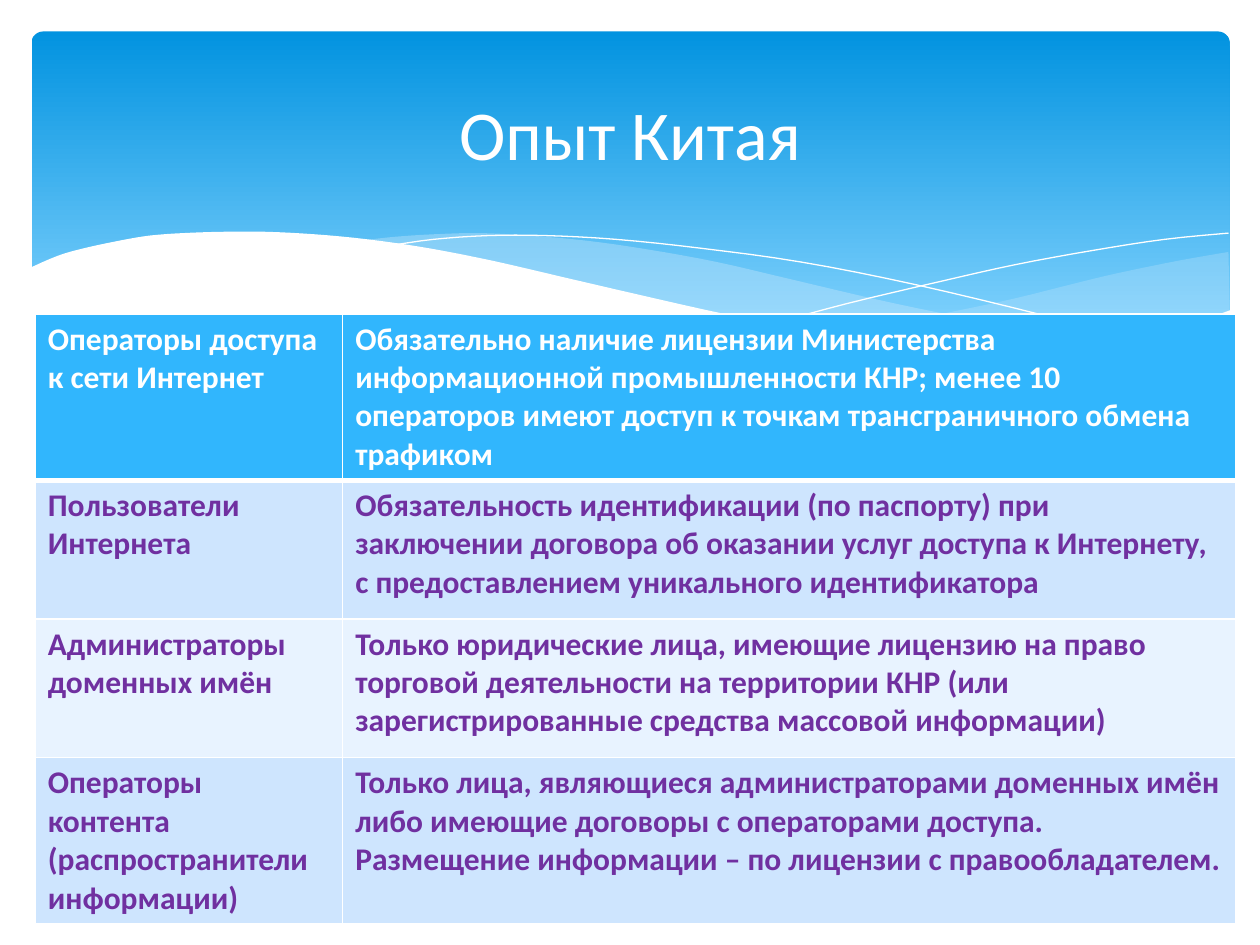
from dataclasses import dataclass
from typing import Optional

from lxml.etree import SubElement
from pptx import Presentation
from pptx.dml.color import RGBColor
from pptx.enum.shapes import MSO_SHAPE as Preset
from pptx.enum.text import MSO_ANCHOR as Anchor, PP_ALIGN as Align
from pptx.oxml.ns import qn
from pptx.util import Emu, Inches, Pt

# The page is a grid of 1000 columns by 750 rows.
UNIT = Inches(0.01)
FONT = "Calibri"
COLORS = {
    "white": "FFFFFF", "sky_top": "0293E0", "sky_bottom": "83D3FE",
    "mist": "C6E7FC", "header": "31B6FD", "band_dark": "CEE5FE",
    "band_light": "E8F3FF", "purple": "7030A0",
}
Point = tuple[float, float]


@dataclass(frozen=True)
class Wave:
    """Edges are smoothed one by one; a wave without fill is an open line."""
    edges: list[list[Point]]
    fill: Optional[str] = None
    opacity: int = 100


@dataclass(frozen=True)
class Row:
    topic: str
    rule: str
    fill: str
    ink: str = "purple"
    rule_below: int = 1


WAVES = [
    Wave([[(975, 200), (935, 207), (891, 216), (861, 223), (805, 237), (753, 248),
           (706, 257), (661, 265)],
          [(661, 265), (705, 271), (757, 276), (803, 278), (844, 277), (881, 273),
           (913, 267), (942, 259), (976, 247)]], "mist", 29),
    Wave([[(893, 273), (837, 265), (775, 254), (706, 240), (629, 222), (569, 208),
           (514, 198), (465, 191), (420, 187), (380, 185), (344, 186), (313, 188),
           (286, 191)],
          [(286, 191), (342, 199), (404, 211), (449, 222), (530, 240), (601, 255),
           (665, 266), (722, 274), (773, 277), (818, 278), (857, 277), (893, 273)]],
         "mist", 40),
    Wave([[(309, 195), (344, 190), (387, 187), (433, 187), (489, 190), (556, 197),
           (636, 208), (727, 226), (831, 251), (907, 272)]]),
    Wave([[(613, 257), (672, 241), (748, 223), (806, 210), (866, 199), (924, 190),
           (975, 185)]]),
    Wave([[(977, 246), (940, 259), (899, 269), (850, 275), (809, 277), (761, 275),
           (708, 270), (648, 262), (579, 250), (503, 233), (447, 220), (391, 207),
           (340, 197), (292, 190), (250, 186), (211, 184), (177, 184), (146, 185),
           (119, 187), (95, 191), (67, 197), (46, 203), (23, 213)],
          [(23, 329), (977, 329)]], "white"),
]

ROWS = [
    Row("Операторы доступа к сети Интернет",
        "Обязательно наличие лицензии Министерства информационной промышленности КНР; "
        "менее 10 операторов имеют доступ к точкам трансграничного обмена трафиком",
        "header", "white", 3),
    Row("Пользователи Интернета",
        "Обязательность идентификации (по паспорту) при заключении договора об оказании "
        "услуг доступа к Интернету, с предоставлением уникального идентификатора",
        "band_dark"),
    Row("Администраторы доменных имён",
        "Только юридические лица, имеющие лицензию на право торговой деятельности на "
        "территории КНР (или зарегистрированные средства массовой информации)",
        "band_light"),
    Row("Операторы контента (распространители информации)",
        "Только лица, являющиеся администраторами доменных имён либо имеющие договоры с "
        "операторами доступа. Размещение информации – по лицензии с правообладателем.",
        "band_dark"),
]


def color(name: str) -> RGBColor:
    return RGBColor.from_string(COLORS[name])


def grid(*lengths: float) -> list[Emu]:
    return [Emu(round(length * UNIT)) for length in lengths]


def smooth(points: list[Point], steps: int = 4) -> list[Point]:
    """Catmull-Rom curve through the points; two points stay a straight line."""
    if len(points) < 3:
        return points
    padded = [points[0], *points, points[-1]]
    curve = [points[0]]
    for a, b, c, d in zip(padded, padded[1:], padded[2:], padded[3:]):
        for step in range(1, steps + 1):
            t = step / steps
            curve.append(tuple(
                (2 * q + (r - p) * t + (2 * p - 5 * q + 4 * r - s) * t ** 2
                 + (3 * q - p - 3 * r + s) * t ** 3) / 2
                for p, q, r, s in zip(a, b, c, d)))
    return curve


def draw_sky(page) -> None:
    sky = page.shapes.add_shape(Preset.ROUNDED_RECTANGLE, *grid(25, 25, 951, 270))
    sky.adjustments[0] = 0.034
    sky.shadow.inherit = False
    sky.line.fill.background()
    sky.fill.gradient()
    sky.fill.gradient_angle = 270
    stops = zip(sky.fill.gradient_stops, (0, 0.9), ("sky_top", "sky_bottom"))
    for stop, position, name in stops:
        stop.position = position
        stop.color.rgb = color(name)


def draw_wave(page, wave: Wave) -> None:
    points = [grid(*point) for edge in wave.edges for point in smooth(edge)]
    builder = page.shapes.build_freeform(*points[0])
    builder.add_line_segments(points[1:], close=wave.fill is not None)
    shape = builder.convert_to_shape()
    shape.shadow.inherit = False
    if wave.fill is None:
        shape.fill.background()
        shape.line.color.rgb = color("white")
        shape.line.width = Pt(0)
        return
    shape.line.fill.background()
    shape.fill.solid()
    shape.fill.fore_color.rgb = color(wave.fill)
    if wave.opacity < 100:
        tint = shape.fill._xPr.find(qn("a:solidFill"))[0]
        SubElement(tint, qn("a:alpha"), val=str(wave.opacity * 1000))


def style_text(frame, size: int, ink: str, bold: bool = False) -> None:
    for para in frame.paragraphs:
        for span in para.runs:
            span.font.name = FONT
            span.font.size = Pt(size)
            span.font.bold = bold
            span.font.color.rgb = color(ink)


def draw_title(page, text: str) -> None:
    box = page.shapes.add_textbox(*grid(50, 37, 900, 137))
    frame = box.text_frame
    frame.word_wrap = True
    frame.vertical_anchor = Anchor.MIDDLE
    frame.text = text
    frame.paragraphs[0].alignment = Align.CENTER
    style_text(frame, 40, "white")


def set_borders(cell, above: int, below: int) -> None:
    """Border widths in points; the schema wants borders before the fill."""
    properties = cell._tc.get_or_add_tcPr()
    for side, width in (("L", 1), ("R", 1), ("T", above), ("B", below)):
        line = SubElement(properties, qn(f"a:ln{side}"), w=str(Pt(width)))
        solid = SubElement(line, qn("a:solidFill"))
        SubElement(solid, qn("a:srgbClr"), val=COLORS["white"])


def draw_table(page, rows: list[Row]) -> None:
    frame = page.shapes.add_table(len(rows), 2, *grid(28, 249, 953, 110 * len(rows)))
    table = frame.table
    table.horz_banding = False
    for column, width in zip(table.columns, grid(244, 709)):
        column.width = width
    above = 1
    for index, row in enumerate(rows):
        for cell, text in zip(table.rows[index].cells, (row.topic, row.rule)):
            set_borders(cell, above, row.rule_below)
            cell.fill.solid()
            cell.fill.fore_color.rgb = color(row.fill)
            cell.text_frame.text = text
            style_text(cell.text_frame, 18, row.ink, bold=True)
        above = row.rule_below


def main() -> None:
    deck = Presentation()
    deck.slide_width, deck.slide_height = grid(1000, 750)
    page = deck.slides.add_slide(deck.slide_layouts[6])
    draw_sky(page)
    for wave in WAVES:
        draw_wave(page, wave)
    draw_table(page, ROWS)
    draw_title(page, "Опыт Китая")
    deck.save("out.pptx")


if __name__ == "__main__":
    main()
